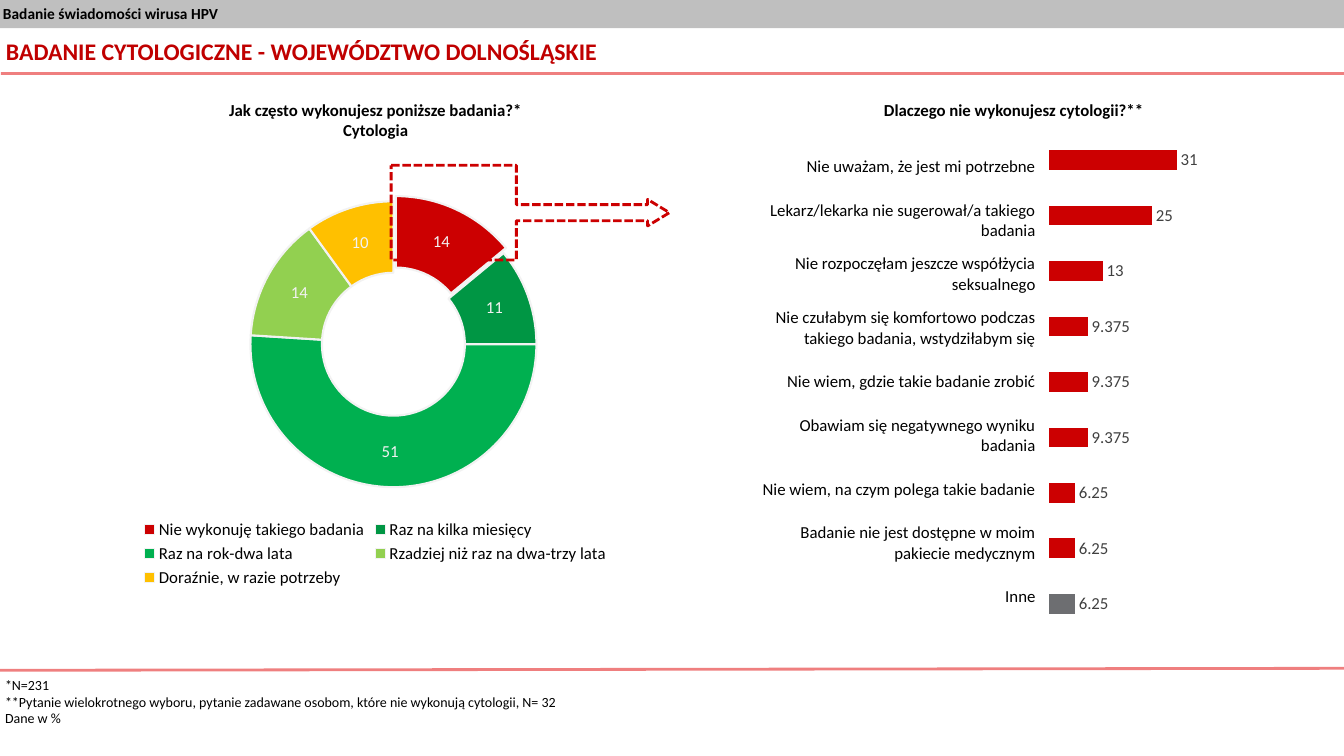
from dataclasses import dataclass

from lxml import etree
from pptx import Presentation
from pptx import util as u
from pptx.chart.data import CategoryChartData
from pptx.dml.color import RGBColor
from pptx.enum import chart as charts
from pptx.enum import dml, shapes, text
from pptx.oxml import parse_xml
from pptx.oxml.ns import nsdecls, qn

PX = 9144  # 100 px to the inch


@dataclass(frozen=True)
class Theme:
    font: str = "Calibri"
    black: str = "000000"
    title: str = "C00000"
    band: str = "808080"
    rule: str = "E00000"
    red: str = "CC0001"
    grey: str = "6D6E71"
    pale: str = "F2F2F2"
    label: str = "404040"
    ring: tuple = ("CC0001", "009644", "00B050", "92D050", "FFC000")
    title_size: int = 17
    body_size: int = 12
    band_size: int = 11
    note_size: int = 10


class SlideBuilder:
    def __init__(self, slide, theme):
        self.slide = slide
        self.theme = theme

    def box(self, *px):
        return [u.Emu(value * PX) for value in px]

    def style_font(self, font, size, color, bold=False):
        font.name, font.size, font.bold = self.theme.font, u.Pt(size), bold
        font.color.rgb = RGBColor.from_string(color)

    def fill(self, target, color):
        target.fill.solid()
        target.fill.fore_color.rgb = RGBColor.from_string(color)

    def fade(self, shape):
        for color in shape._element.spPr.iter(qn("a:srgbClr")):
            etree.SubElement(color, qn("a:alpha"), val="50000")

    def set_text(self, shape, lines, size, color, bold=False, align=None, anchor=text.MSO_ANCHOR.TOP):
        frame = shape.text_frame
        frame.word_wrap = True
        frame.vertical_anchor = anchor
        frame.margin_left = frame.margin_right = frame.margin_top = frame.margin_bottom = u.Emu(5 * PX)
        frame.text = "\n".join(lines)
        for paragraph in frame.paragraphs:
            paragraph.alignment = align or text.PP_ALIGN.LEFT
            self.style_font(paragraph.font, size, color, bold)

    def textbox(self, px, lines, size, color, **options):
        self.set_text(self.slide.shapes.add_textbox(*self.box(*px)), lines, size, color, **options)

    def band(self, px, line):
        shape = self.slide.shapes.add_shape(shapes.MSO_SHAPE.RECTANGLE, *self.box(*px))
        shape.shadow.inherit = False
        self.fill(shape, self.theme.band)
        shape.line.fill.background()
        self.fade(shape)
        self.set_text(shape, [line], self.theme.band_size, self.theme.black, bold=True)

    def rule(self, *px):
        line = self.slide.shapes.add_connector(shapes.MSO_CONNECTOR.STRAIGHT, *self.box(*px))
        line.line.color.rgb = RGBColor.from_string(self.theme.rule)
        line.line.width = u.Pt(2)
        self.fade(line)
        etree.SubElement(line._element.spPr, qn("a:effectLst"))

    def callout(self, px, adjustments):
        shape = self.slide.shapes.add_shape(shapes.MSO_SHAPE.RIGHT_ARROW_CALLOUT, *self.box(*px))
        shape.shadow.inherit = False
        for index, value in enumerate(adjustments):
            shape.adjustments[index] = value
        shape.fill.background()
        shape.line.color.rgb = RGBColor.from_string(self.theme.red)
        shape.line.width = u.Pt(2)
        shape.line.dash_style = dml.MSO_LINE.SQUARE_DOT

    def chart(self, kind, px, categories, values, layout, label_color, number_format):
        data = CategoryChartData()
        data.categories = categories
        data.add_series("Series 1", values)
        chart = self.slide.shapes.add_chart(kind, *self.box(*px), data).chart
        chart.has_title = chart.has_legend = False
        self.style_font(chart.font, self.theme.body_size, self.theme.black)
        # Fixed inner plot area
        area = chart._chartSpace.chart.plotArea
        for old in area.findall(qn("c:layout")):
            area.remove(old)
        sizes = "".join(f'<c:{key} val="{value}"/>' for key, value in zip("xywh", layout))
        area.insert(0, parse_xml(
            f'<c:layout {nsdecls("c")}><c:manualLayout><c:layoutTarget val="inner"/>'
            f'<c:xMode val="edge"/><c:yMode val="edge"/>{sizes}</c:manualLayout></c:layout>'))
        series = chart.plots[0].series[0]
        labels = series.data_labels
        labels.show_value = True
        labels.number_format, labels.number_format_is_linked = number_format, False
        self.style_font(labels.font, self.theme.body_size, label_color)
        return chart, series

    def doughnut(self, px, categories, values):
        chart, series = self.chart(charts.XL_CHART_TYPE.DOUGHNUT, px, categories, values,
                                   (0.29, 0.05, 0.48, 0.7), self.theme.pale, "###0")
        chart.plots[0].vary_by_categories = True
        for index, color in enumerate(self.theme.ring):
            point = series.points[index].format
            self.fill(point, color)
            point.line.color.rgb = RGBColor.from_string(self.theme.pale)
            point.line.width = u.Pt(1.5)
        # Pull the first slice out
        first = series._element.find(qn("c:dPt"))
        first.find(qn("c:spPr")).addprevious(parse_xml(f'<c:explosion {nsdecls("c")} val="8"/>'))
        next(chart._chartSpace.iter(qn("c:holeSize"))).set("val", "75")
        chart.has_legend = True
        chart.legend.position = charts.XL_LEGEND_POSITION.BOTTOM
        chart.legend.include_in_layout = False
        self.style_font(chart.legend.font, self.theme.body_size, self.theme.black)

    def bars(self, px, values):
        names = [str(number) for number in range(1, len(values) + 1)]
        chart, series = self.chart(charts.XL_CHART_TYPE.BAR_CLUSTERED, px, names, values,
                                   (0.02, 0.02, 0.96, 0.96), self.theme.label, "General")
        chart.plots[0].vary_by_categories = False
        chart.plots[0].gap_width = 182
        series.data_labels.position = charts.XL_LABEL_POSITION.OUTSIDE_END
        self.fill(series.format, self.theme.red)
        self.fill(series.points[len(values) - 1].format, self.theme.grey)
        chart.category_axis.reverse_order = True
        axis = chart.value_axis
        axis.minimum_scale, axis.maximum_scale = 0, 100
        axis.has_major_gridlines = False
        axis.visible = chart.category_axis.visible = False

    def table(self, px, rows):
        table = self.slide.shapes.add_table(len(rows), 1, *self.box(*px)).table
        table.first_row = table.horz_banding = False
        for index, line in enumerate(rows):
            cell = table.cell(index, 0)
            cell.fill.background()
            cell.vertical_anchor = text.MSO_ANCHOR.MIDDLE
            cell.text = line
            paragraph = cell.text_frame.paragraphs[0]
            paragraph.alignment = text.PP_ALIGN.RIGHT
            self.style_font(paragraph.font, self.theme.body_size, self.theme.black)


def main():
    presentation = Presentation()
    presentation.slide_width, presentation.slide_height = u.Emu(1333 * PX), u.Emu(750 * PX)
    theme = Theme()
    builder = SlideBuilder(presentation.slides.add_slide(presentation.slide_layouts[6]), theme)
    heading = dict(bold=True, align=text.PP_ALIGN.CENTER)

    # Header, title and rules
    builder.band((-2, -1, 1336, 29), "Badanie świadomości wirusa HPV")
    builder.rule(1340, 73, 1, 73)
    builder.rule(1339, 663, -13, 665)
    builder.textbox((1, 29, 1333, 44), ["BADANIE CYTOLOGICZNE - WOJEWÓDZTWO DOLNOŚLĄSKIE"],
                    theme.title_size, theme.title, bold=True, anchor=text.MSO_ANCHOR.MIDDLE)

    # Frequency of the test
    builder.doughnut((77, 178, 591, 409),
                     ["Nie wykonuję takiego badania", "Raz na kilka miesięcy", "Raz na rok-dwa lata",
                      "Rzadziej niż raz na dwa-trzy lata", "Doraźnie, w razie potrzeby"],
                     [14, 11, 51, 14, 10])
    builder.textbox((138, 94, 469, 50), ["Jak często wykonujesz poniższe badania?*", "Cytologia"],
                    theme.body_size, theme.black, **heading)

    # Footnotes
    builder.textbox((0, 666, 799, 61),
                    ["*N=231",
                     "**Pytanie wielokrotnego wyboru, pytanie zadawane osobom, które nie wykonują cytologii, N= 32",
                     "Dane w %"], theme.note_size, theme.black)

    # Reasons for skipping the test
    builder.callout((388, 164, 276, 94), (0.17, 0.14, 0.23, 0.45))
    builder.textbox((771, 94, 469, 30), ["Dlaczego nie wykonujesz cytologii?**"],
                    theme.body_size, theme.black, **heading)
    builder.bars((1032, 121, 425, 516), [31, 25, 13] + [9.375] * 3 + [6.25] * 3)
    builder.table((733, 139, 304, 480),
                  ["Nie uważam, że jest mi potrzebne",
                   "Lekarz/lekarka nie sugerował/a takiego badania",
                   "Nie rozpoczęłam jeszcze współżycia seksualnego",
                   "Nie czułabym się komfortowo podczas takiego badania, wstydziłabym się",
                   "Nie wiem, gdzie takie badanie zrobić",
                   "Obawiam się negatywnego wyniku badania",
                   "Nie wiem, na czym polega takie badanie",
                   "Badanie nie jest dostępne w moim pakiecie medycznym",
                   "Inne"])

    presentation.save("out.pptx")


if __name__ == "__main__":
    main()
